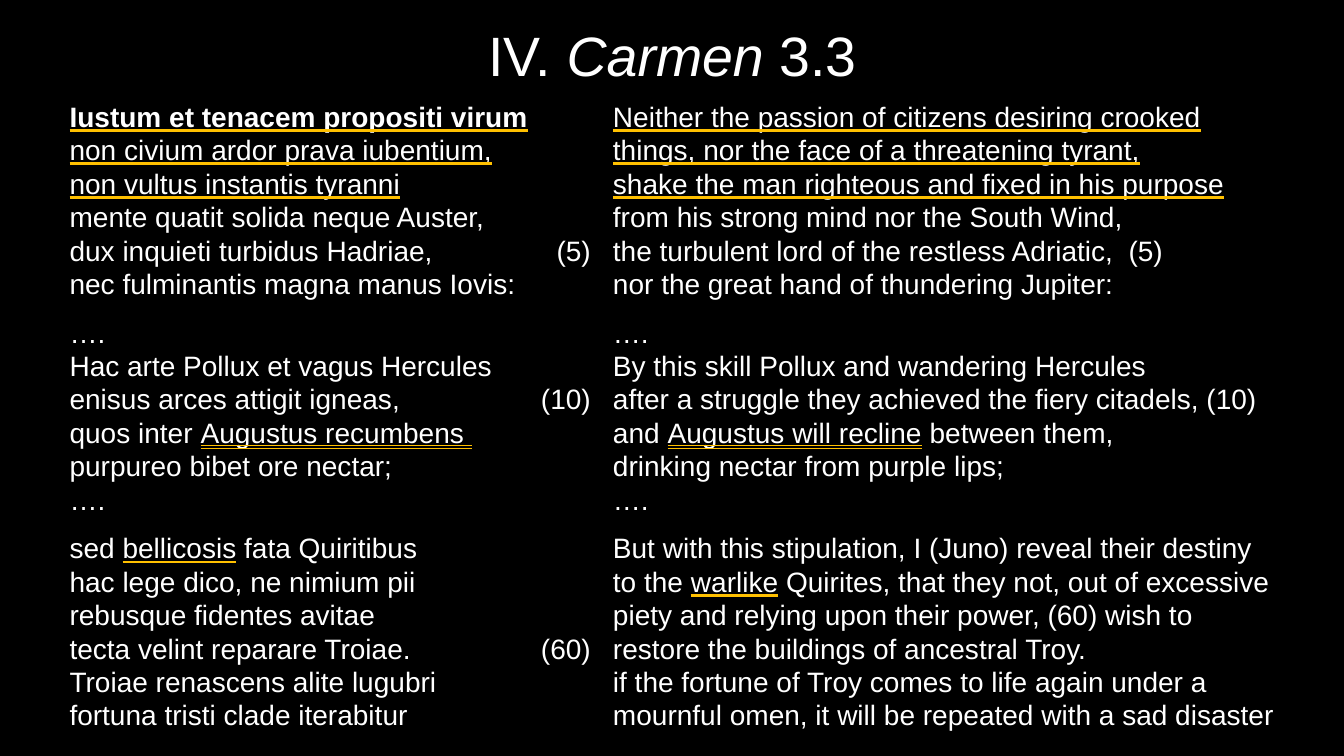
from lxml import etree
from pptx import Presentation
from pptx.dml.color import RGBColor
from pptx.enum.text import MSO_ANCHOR, MSO_UNDERLINE, PP_ALIGN
from pptx.oxml.ns import qn
from pptx.util import Inches, Pt

HEAVY = MSO_UNDERLINE.HEAVY_LINE
DOUBLE = MSO_UNDERLINE.DOUBLE_LINE
BLACK, WHITE, GOLD = "000000", "FFFFFF", "FFC000"
FONT = "Arial"
COLUMNS = (5.39, 6.71)
ROWS = (2.07, 2.07, 2.25)
LINE_NUMBER_TAB = 5.17

# A line is a list of spans: (text, underline, bold); the last two may be left out.
STANZAS = [
    (
        [
            [("Iustum et tenacem propositi virum", HEAVY, True)],
            [("non civium ardor prava iubentium,", HEAVY)],
            [("non vultus instantis tyranni", HEAVY)],
            [("mente quatit solida neque Auster,",)],
            [("dux inquieti turbidus Hadriae,\t(5)",)],
            [("nec fulminantis magna manus Iovis:",)],
        ],
        [
            [("Neither the passion of citizens desiring crooked things, "
              "nor the face of a threatening tyrant,", HEAVY)],
            [("shake the man righteous and fixed in his purpose", HEAVY)],
            [("from his strong mind nor the South Wind,",)],
            [("the turbulent lord of the restless Adriatic,  (5)",)],
            [("nor the great hand of thundering Jupiter:",)],
        ],
    ),
    (
        [
            [("….",)],
            [("Hac arte Pollux et vagus Hercules",)],
            [("enisus arces attigit igneas,\t(10)",)],
            [("quos inter ",), ("Augustus recumbens ", DOUBLE)],
            [("purpureo bibet ore nectar;",)],
            [("….",)],
        ],
        [
            [("….",)],
            [("By this skill Pollux and wandering Hercules",)],
            [("after a struggle they achieved the fiery citadels, (10)",)],
            [("and ",), ("Augustus will recline", DOUBLE), (" between them,",)],
            [("drinking nectar from purple lips;",)],
            [("….",)],
        ],
    ),
    (
        [
            [("sed ",), ("bellicosis", HEAVY), (" fata Quiritibus",)],
            [("hac lege dico, ne nimium pii",)],
            [("rebusque fidentes avitae",)],
            [("tecta velint reparare Troiae.\t(60)",)],
            [("Troiae renascens alite lugubri",)],
            [("fortuna tristi clade iterabitur",)],
        ],
        [
            [("But with this stipulation, I (Juno) reveal their destiny to the ",),
             ("warlike", HEAVY),
             (" Quirites, that they not, out of excessive piety and relying upon "
              "their power, (60) wish to restore the buildings of ancestral Troy.",)],
            [("if the fortune of Troy comes to life again under a mournful omen, "
              "it will be repeated with a sad disaster",)],
        ],
    ),
]


def rgb(value):
    return RGBColor.from_string(value)


def add_child(parent, tag, **attributes):
    return etree.SubElement(parent, qn(tag), attributes)


def add_span(para, text, size, underline=None, bold=False, italic=False):
    span = para.add_run()
    span.text = text
    font = span.font
    font.name, font.size, font.bold, font.italic = FONT, Pt(size), bold, italic
    font.color.rgb = rgb(WHITE)
    if underline:
        font.underline = underline
        line_fill = etree.Element(qn("a:uFill"))
        add_child(add_child(line_fill, "a:solidFill"), "a:srgbClr", val=GOLD)
        font._element.find(qn("a:solidFill")).addnext(line_fill)


def add_right_tab(para, position):
    tabs = add_child(para._p.get_or_add_pPr(), "a:tabLst")
    add_child(tabs, "a:tab", pos=str(Inches(position)), algn="r")


def add_borders(cell, color):
    properties = cell._tc.get_or_add_tcPr()
    for index, side in enumerate(("a:lnL", "a:lnR", "a:lnT", "a:lnB")):
        border = etree.Element(qn(side), w=str(Pt(1)))
        add_child(add_child(border, "a:solidFill"), "a:srgbClr", val=color)
        properties.insert(index, border)


def fill_cell(cell, lines):
    cell.margin_left = cell.margin_right = Inches(0.07)
    cell.margin_top = cell.margin_bottom = 0
    cell.vertical_anchor = MSO_ANCHOR.TOP
    cell.fill.background()
    add_borders(cell, BLACK)
    frame = cell.text_frame
    for number, line in enumerate(lines):
        para = frame.add_paragraph() if number else frame.paragraphs[0]
        para.line_spacing = 1.07
        if "\t" in line[0][0]:
            add_right_tab(para, LINE_NUMBER_TAB)
        for text, *style in line:
            add_span(para, text, 20, *style)


def add_title(page):
    box = page.shapes.add_textbox(Inches(0.92), Inches(0.21), Inches(11.5), Inches(0.75))
    frame = box.text_frame
    frame.word_wrap = True
    frame.vertical_anchor = MSO_ANCHOR.MIDDLE
    para = frame.paragraphs[0]
    para.alignment = PP_ALIGN.CENTER
    para.line_spacing = 0.9
    for text, italic in (("IV. ", False), ("Carmen", True), (" 3.3", False)):
        add_span(para, text, 39.6, italic=italic)


def add_poem(page):
    frame = page.shapes.add_table(len(ROWS), len(COLUMNS), Inches(0.62), Inches(0.99),
                                  Inches(sum(COLUMNS)), Inches(sum(ROWS)))
    table = frame.table
    table.first_row = table.horz_banding = False
    for column, width in zip(table.columns, COLUMNS):
        column.width = Inches(width)
    for row, height, stanza in zip(table.rows, ROWS, STANZAS):
        row.height = Inches(height)
        for cell, lines in zip(row.cells, stanza):
            fill_cell(cell, lines)


def main():
    deck = Presentation()
    deck.slide_width, deck.slide_height = Inches(13.33), Inches(7.5)
    page = deck.slides.add_slide(deck.slide_layouts[6])
    page.background.fill.solid()
    page.background.fill.fore_color.rgb = rgb(BLACK)
    add_title(page)
    add_poem(page)
    deck.save("out.pptx")


if __name__ == "__main__":
    main()
